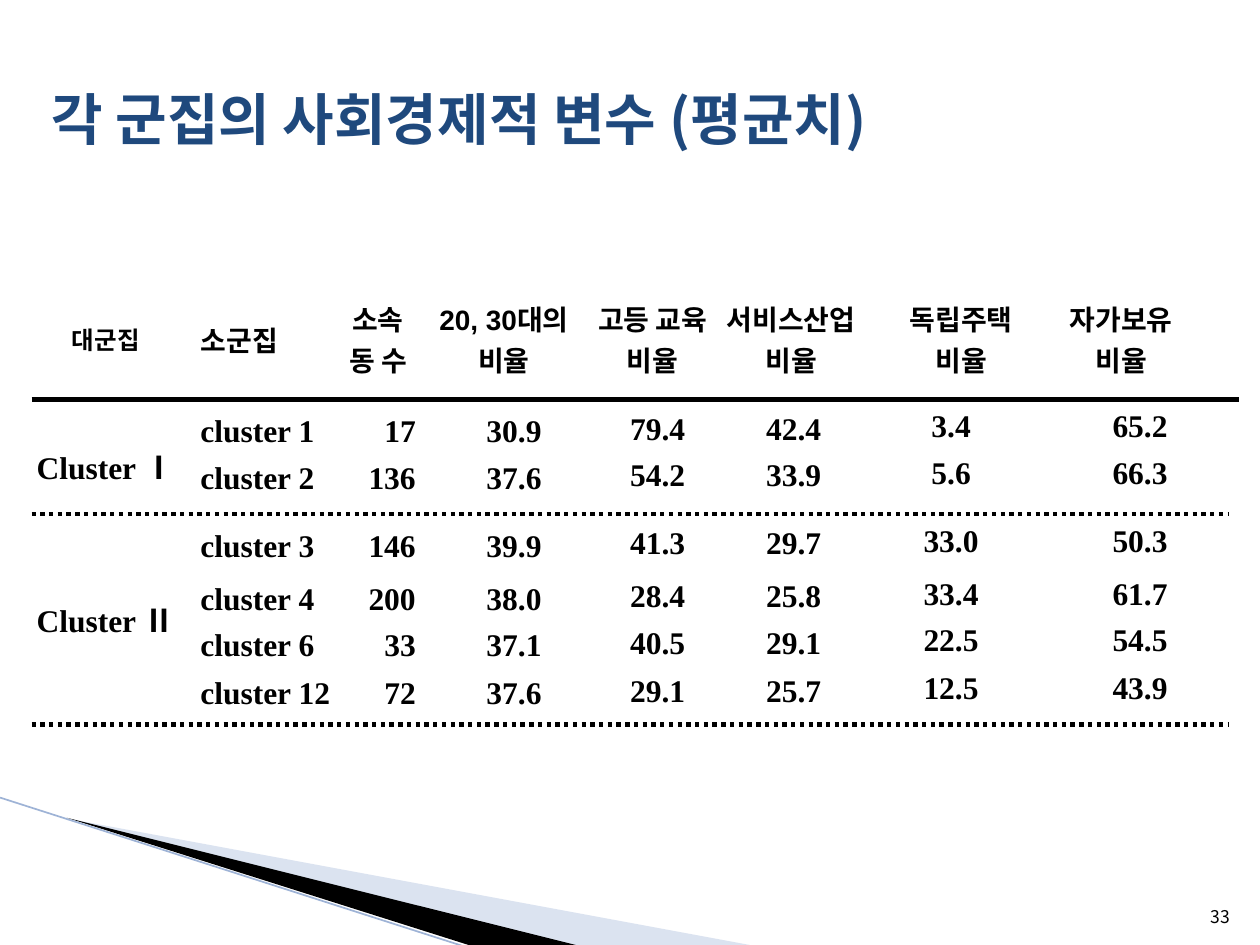
from lxml import etree
from pptx import Presentation
from pptx.dml.color import RGBColor
from pptx.enum.dml import MSO_LINE
from pptx.enum.shapes import MSO_CONNECTOR
from pptx.enum.text import MSO_ANCHOR, PP_ALIGN
from pptx.oxml.ns import qn
from pptx.util import Inches, Pt

LEFT, CENTER, RIGHT = PP_ALIGN.LEFT, PP_ALIGN.CENTER, PP_ALIGN.RIGHT
TOP, MIDDLE, BOTTOM = MSO_ANCHOR.TOP, MSO_ANCHOR.MIDDLE, MSO_ANCHOR.BOTTOM
STRAIGHT, DOTTED = MSO_CONNECTOR.STRAIGHT, MSO_LINE.ROUND_DOT
BLACK = RGBColor(0x00, 0x00, 0x00)
NAVY = RGBColor(0x1F, 0x49, 0x7D)
PALE_BLUE = RGBColor(0xA7, 0xB9, 0xDB)
LINE_BLUE = RGBColor(0x9E, 0xB3, 0xD6)
SANS, SERIF, KOREAN = "Arial", "Times New Roman", "Noto Sans CJK KR"


def add_span(para, text, font, size, color=BLACK, bold=True):
    span = para.add_run()
    span.text = text
    span.font.name = font
    span.font.size = Pt(size)
    span.font.bold = bold
    span.font.color.rgb = color
    east_asian = etree.SubElement(span.font._element, qn("a:ea"))
    east_asian.set("typeface", KOREAN)


def add_rule(start_x, start_y, end_x, end_y, width, color):
    rule = page.shapes.add_connector(
        STRAIGHT, Inches(start_x), Inches(start_y), Inches(end_x), Inches(end_y))
    rule.line.width = Pt(width)
    rule.line.color.rgb = color
    etree.SubElement(rule._element.spPr, qn("a:effectLst"))
    return rule


deck = Presentation()
deck.slide_width, deck.slide_height = Inches(10), Inches(7.5)
page = deck.slides.add_slide(deck.slide_layouts[6])

# Wedges in the lower left corner
wedges = [
    ([(0.55, 6.5), (5.95, 7.5), (4.56, 7.5)], PALE_BLUE),
    ([(0.53, 6.49), (4.57, 7.5), (3.72, 7.5)], BLACK),
]
for corners, color in wedges:
    points = [(Inches(x), Inches(y)) for x, y in corners]
    builder = page.shapes.build_freeform(*points[0], scale=1.0)
    builder.add_line_segments(points[1:], close=True)
    wedge = builder.convert_to_shape()
    wedge.shadow.inherit = False
    wedge.fill.solid()
    wedge.fill.fore_color.rgb = color
    wedge.line.fill.background()
    if color == PALE_BLUE:
        fill_color = wedge._element.spPr.find(".//" + qn("a:srgbClr"))
        etree.SubElement(fill_color, qn("a:alpha")).set("val", "40000")
add_rule(0, 6.33, 3.71, 7.52, 0.95, LINE_BLUE)

# Title and page number
labels = [
    ("각 군집의 사회경제적 변수 (평균치)", 0.31, 0.31, 9, 1.25, MIDDLE, LEFT, 32, NAVY, True),
    ("33", 9.46, 7.01, 0.4, 0.4, BOTTOM, RIGHT, 10, BLACK, False),
]
for text, left, top, width, height, anchor, align, size, color, bold in labels:
    box = page.shapes.add_textbox(Inches(left), Inches(top), Inches(width), Inches(height))
    frame = box.text_frame
    frame.word_wrap = True
    frame.vertical_anchor = anchor
    frame.paragraphs[0].alignment = align
    add_span(frame.paragraphs[0], text, KOREAN, size, color, bold)

# Table of cluster averages
column_edges = [0.25, 1.4, 2.62, 3.42, 4.58, 5.75, 6.85, 8.2, 9.75]
row_edges = [2.21, 3.17, 3.62, 4.08, 4.55, 4.95, 5.33, 5.75]
headers = [
    (["대군집"], SANS, 14), (["소군집"], KOREAN, 16), (["소속", "동 수"], SANS, 16),
    (["20, 30대의", "비율"], SANS, 16), (["고등 교육", "비율"], SANS, 16),
    (["서비스산업", "비율"], SANS, 16), (["독립주택", "비율"], SANS, 16),
    (["자가보유", "비율"], SANS, 16),
]
header_centers = [0.84, 1.9, 3, 4, 5.18, 6.28, 7.63, 8.9]
value_centers = [0.84, 2.04, 3, 4.08, 5.22, 6.3, 7.55, 9.05]
rows = [
    ("Ⅰ", "cluster 1", "17", "30.9", "79.4", "42.4", "3.4", "65.2"),
    ("", "cluster 2", "136", "37.6", "54.2", "33.9", "5.6", "66.3"),
    ("Ⅱ", "cluster 3", "146", "39.9", "41.3", "29.7", "33.0", "50.3"),
    ("", "cluster 4", "200", "38.0", "28.4", "25.8", "33.4", "61.7"),
    ("", "cluster 6", "33", "37.1", "40.5", "29.1", "22.5", "54.5"),
    ("", "cluster 12", "72", "37.6", "29.1", "25.7", "12.5", "43.9"),
]
text_tops = [3.29, 3.66, 4.2, 4.62, 4.99, 5.37]
column_lifts = [0, 0, 0, 0, 0.02, 0.02, 0.04, 0.04]

table = page.shapes.add_table(
    len(rows) + 1, len(headers), Inches(column_edges[0]), Inches(row_edges[0]),
    Inches(column_edges[-1] - column_edges[0]),
    Inches(row_edges[-1] - row_edges[0])).table
table.first_row = table.horz_banding = False
for column, left, right in zip(table.columns, column_edges, column_edges[1:]):
    column.width = Inches(right - left)
for row, top, bottom in zip(table.rows, row_edges, row_edges[1:]):
    row.height = Inches(bottom - top)
table.cell(1, 0).merge(table.cell(2, 0))
table.cell(3, 0).merge(table.cell(6, 0))

for r in range(len(rows) + 1):
    for c in range(len(headers)):
        cell = table.cell(r, c)
        cell.fill.background()
        center = (value_centers if r else header_centers)[c]
        shift = 2 * center - column_edges[c] - column_edges[c + 1]
        cell.margin_left = Inches(max(shift, 0))
        cell.margin_right = Inches(max(-shift, 0))
        cell.margin_top = cell.margin_bottom = 0
        cell.vertical_anchor = MIDDLE if r == 0 or c == 0 else TOP
        para = cell.text_frame.paragraphs[0]
        para.alignment = CENTER
        if r == 0:
            lines, font, size = headers[c]
            for i, line in enumerate(lines):
                if i:
                    para = cell.text_frame.add_paragraph()
                    para.alignment = CENTER
                add_span(para, line, font, size)
            continue
        value = rows[r - 1][c]
        if c == 0:
            if value:
                add_span(para, "Cluster ", SERIF, 18)
                add_span(para, value, KOREAN, 18)
            if r == 1:
                cell.margin_top = Inches(0.14)
            continue
        cell.margin_top = Inches(text_tops[r - 1] - row_edges[r] - column_lifts[c])
        if c == 1:
            para.alignment = LEFT
            cell.margin_left, cell.margin_right = Inches(0.19), 0
        elif c == 2:
            para.alignment = RIGHT
            cell.margin_left, cell.margin_right = 0, Inches(0.12)
        add_span(para, value, SERIF, 18)

# Rules under the header and under each large cluster
add_rule(0.25, 3.17, 9.83, 3.17, 3, BLACK)
for y in (4.08, 5.75):
    add_rule(0.25, y, 9.75, y, 2.5, BLACK).line.dash_style = DOTTED

deck.save("out.pptx")
